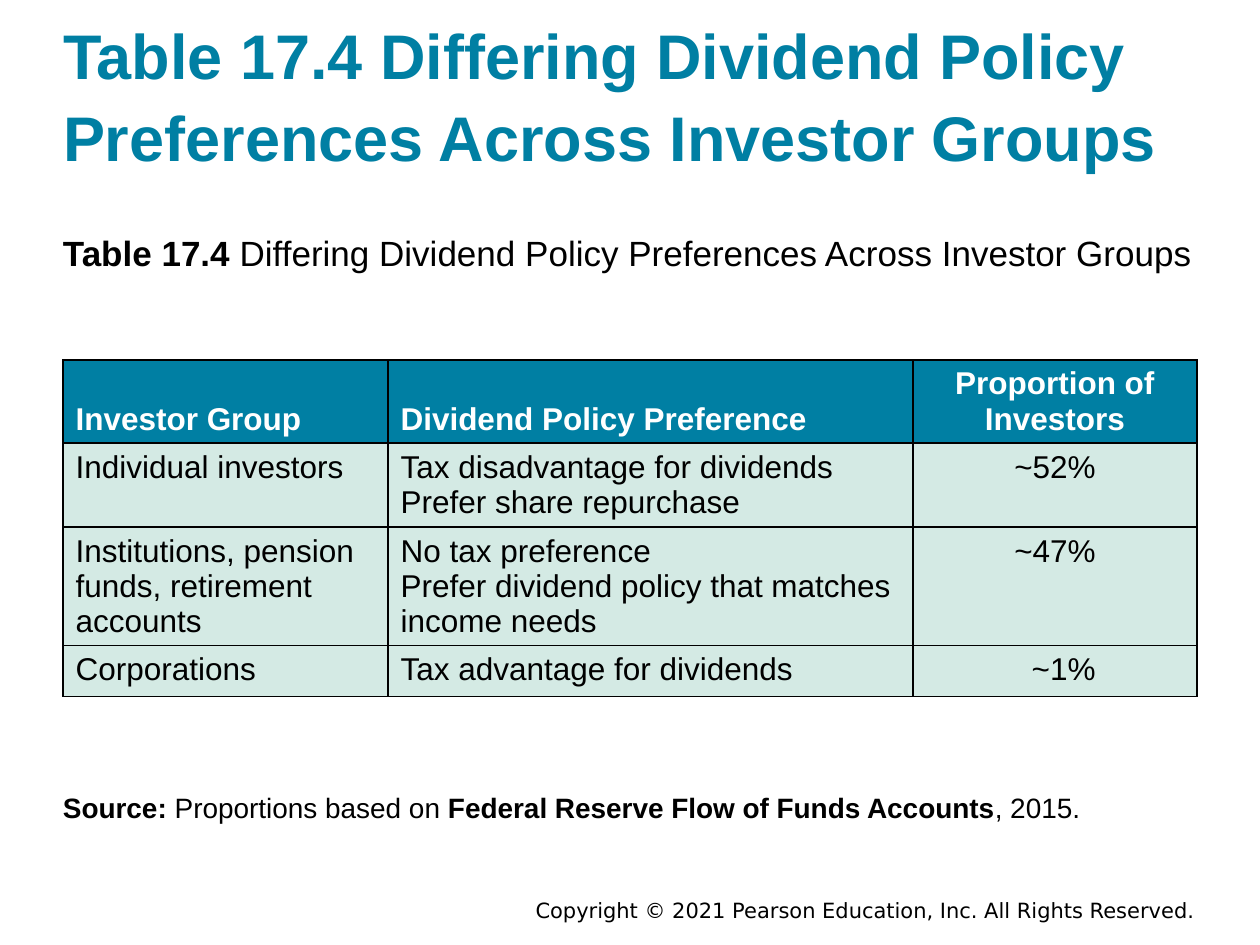
from lxml import etree
from pptx import Presentation
from pptx.dml.color import RGBColor
from pptx.enum.text import MSO_ANCHOR as Anchor, MSO_AUTO_SIZE as Fit, PP_ALIGN as Align
from pptx.oxml.ns import qn
from pptx.util import Emu, Pt

SCALE = 914400 / 126
TEAL, MINT, BLACK, WHITE = "007FA3", "D4EAE4", "000000", "FFFFFF"
LEFT, WIDTH = 63, 1134
COLS = [325, 525, 284]
ROWS = [83, 84, 118, 51]
DATA = [
    ["Investor Group", "Dividend Policy Preference", "Proportion of\nInvestors"],
    ["Individual investors", "Tax disadvantage for dividends Prefer share repurchase", "~52%"],
    ["Institutions, pension funds, retirement accounts",
     "No tax preference\nPrefer dividend policy that matches income needs", "~47%"],
    ["Corporations", "Tax advantage for dividends", "~1%"],
]


def px(n):
    return Emu(round(n * SCALE))


def color(code):
    return RGBColor.from_string(code)


def style(font, code=BLACK, **form):
    for key, value in {"name": "Arial", "bold": False, **form}.items():
        setattr(font, key, value)
    font.color.rgb = color(code)


def set_frame(frame, inset=0, anchor=Anchor.TOP):
    form = {"word_wrap": True, "auto_size": Fit.NONE, "vertical_anchor": anchor}
    for side in ("left", "top", "right", "bottom"):
        form["margin_" + side] = px(inset)
    for key, value in form.items():
        setattr(frame, key, value)


def add_title(slide, box, text):
    title = slide.shapes.title
    title.left, title.top, title.width, title.height = map(px, box)
    frame = title.text_frame
    set_frame(frame, anchor=Anchor.BOTTOM)
    frame.text = text
    para = frame.paragraphs[0]
    para.alignment, para.line_spacing = Align.LEFT, 1.08
    style(para.runs[0].font, TEAL, size=Pt(36), bold=True)


def add_line(slide, box, parts, size, face="Arial", align=Align.LEFT, inset=0, space=1.08):
    """Add one paragraph made of (text, bold) parts."""
    frame = slide.shapes.add_textbox(*map(px, box)).text_frame
    set_frame(frame, inset)
    para = frame.paragraphs[0]
    para.alignment, para.line_spacing = align, space
    for text, bold in parts:
        run = para.add_run()
        run.text = text
        style(run.font, size=Pt(size), bold=bold, name=face)


def add_edges(cell):
    props = cell._tc.get_or_add_tcPr()
    for at, tag in enumerate(("a:lnL", "a:lnR", "a:lnT", "a:lnB")):
        line = etree.Element(qn(tag), w=str(Pt(1)))
        fill = etree.SubElement(line, qn("a:solidFill"))
        etree.SubElement(fill, qn("a:srgbClr"), val=BLACK)
        props.insert(at, line)


def fill_cell(cell, text, head, center):
    cell.text = text
    cell.fill.solid()
    cell.fill.fore_color.rgb = color(TEAL if head else MINT)
    cell.vertical_anchor = Anchor.BOTTOM if head and not center else Anchor.TOP
    for para in cell.text_frame.paragraphs:
        para.alignment = Align.CENTER if center else Align.LEFT
        for run in para.runs:
            style(run.font, WHITE if head else BLACK, size=Pt(18), bold=head)
    add_edges(cell)


def add_grid(slide, left, top):
    box = map(px, (left, top, sum(COLS), sum(ROWS)))
    table = slide.shapes.add_table(len(ROWS), len(COLS), *box).table
    for col, width in zip(table.columns, COLS):
        col.width = px(width)
    for row, height in zip(table.rows, ROWS):
        row.height = px(height)
    for r, line in enumerate(DATA):
        for c, text in enumerate(line):
            fill_cell(table.cell(r, c), text, r == 0, c == 2)
    # One digit fewer: shift so the percent signs line up
    table.cell(3, 2).margin_left = px(30)


def main():
    deck = Presentation()
    deck.slide_width, deck.slide_height = px(1260), px(945)
    slide = deck.slides.add_slide(deck.slide_layouts[5])
    topic = "Differing Dividend Policy Preferences Across Investor Groups"
    add_title(slide, (LEFT, 23, WIDTH, 151), "Table 17.4 " + topic)
    add_line(slide, (LEFT, 228, WIDTH, 63), [("Table 17.4", True), (" " + topic, False)], 20)
    add_grid(slide, LEFT, 360)
    add_line(slide, (LEFT, 788, WIDTH, 35), [
        ("Source: ", True), ("Proportions based on ", False),
        ("Federal Reserve Flow of Funds Accounts", True), (", 2015.", False)], 16)
    add_line(slide, (220, 886, 987, 38),
             [("Copyright © 2021 Pearson Education, Inc. All Rights Reserved.", False)],
             12, "DejaVu Sans", Align.RIGHT, inset=12, space=1)
    deck.save("out.pptx")


if __name__ == "__main__":
    main()
